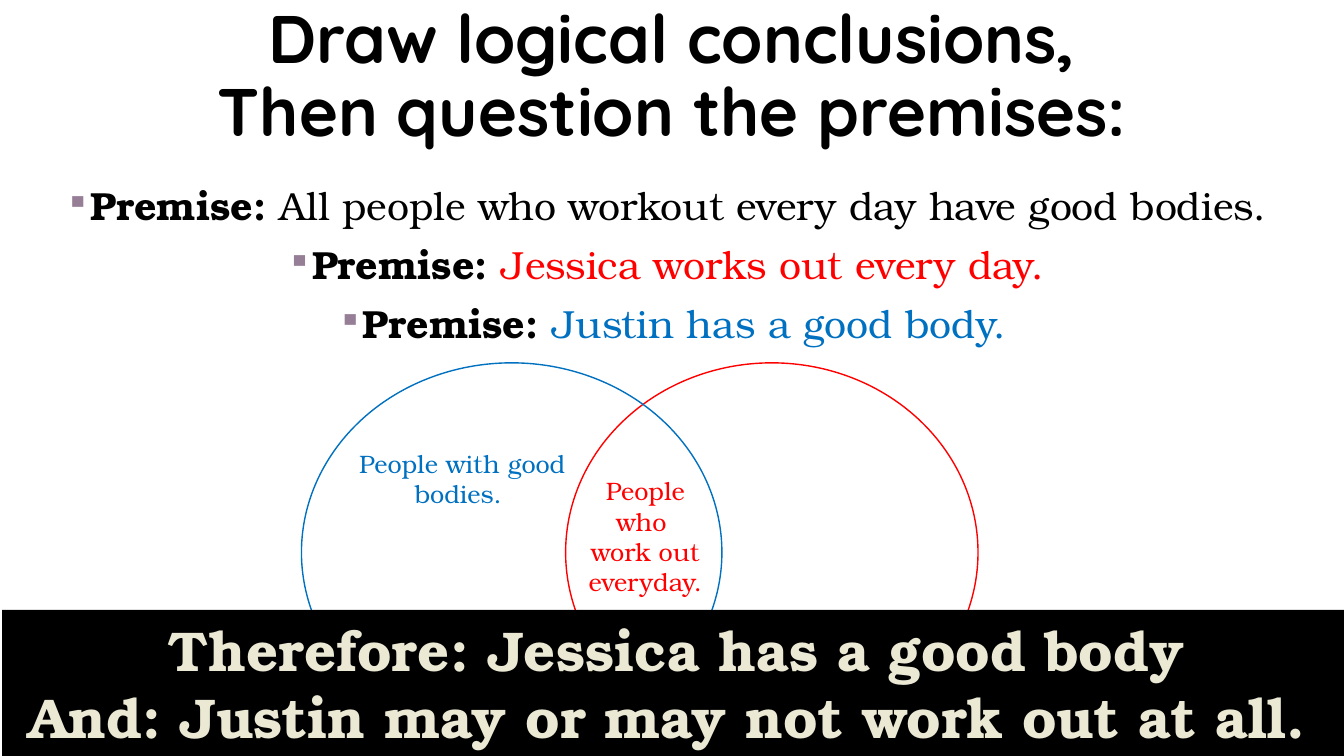
from pptx import Presentation
from pptx.dml.color import RGBColor
from pptx.enum.shapes import MSO_SHAPE
from pptx.enum.text import MSO_ANCHOR, PP_ALIGN
from pptx.oxml.ns import qn
from pptx.util import Inches, Pt
from lxml import etree

BLACK = RGBColor(0x00, 0x00, 0x00)
RED = RGBColor(0xFF, 0x00, 0x00)
BLUE = RGBColor(0x00, 0x70, 0xC0)
CREAM = RGBColor(0xEB, 0xE9, 0xD4)
MAUVE = RGBColor(0x96, 0x7E, 0x96)
HEADING, BODY = "Quicksand", "TeX Gyre Bonum"

PREMISES = [
    ("All people who workout every day have good bodies. ", BLACK),
    ("Jessica works out every day. ", RED),
    ("Justin has a good body.", BLUE),
]


def style(font, color, **values):
    """Set the colour and the given attributes of a font."""
    for name, value in values.items():
        setattr(font, name, value)
    font.color.rgb = color


def add_bullet(p):
    """Give a paragraph a small square bullet with a hanging indent."""
    pPr = p._p.get_or_add_pPr()
    pPr.set("marL", str(Inches(0.2)))
    pPr.set("indent", str(-Inches(0.2)))
    clr = etree.SubElement(pPr, qn("a:buClr"))
    etree.SubElement(clr, qn("a:srgbClr"), val=str(MAUVE))
    etree.SubElement(pPr, qn("a:buSzPct"), val="85000")
    etree.SubElement(pPr, qn("a:buChar"), char="▪")


def add_lines(tf, lines, color, size, bold=False, wrap=True):
    """Write centred paragraphs in one format."""
    tf.word_wrap = wrap
    for i, line in enumerate(lines):
        p = tf.paragraphs[0] if i == 0 else tf.add_paragraph()
        p.alignment = PP_ALIGN.CENTER
        r = p.add_run()
        r.text = line
        style(r.font, color, name=BODY, size=Pt(size), bold=bold)


def add_title(s, x, y, w, h):
    """Place and format the two-line title."""
    sp = s.shapes.title
    box = dict(left=Inches(x), top=Inches(y), width=Inches(w), height=Inches(h))
    for name, value in box.items():
        setattr(sp, name, value)
    tf = sp.text_frame
    tf.text = "Draw logical conclusions,\vThen question the premises:"
    tf.vertical_anchor = MSO_ANCHOR.MIDDLE
    p = tf.paragraphs[0]
    p.alignment, p.line_spacing = PP_ALIGN.CENTER, 0.9
    for r in p.runs:
        style(r.font, BLACK, name=HEADING, size=Pt(48), bold=True)


def add_premises(s, x, y, w, h):
    """List the premises as centred bullets."""
    sp = s.shapes.add_textbox(Inches(x), Inches(y), Inches(w), Inches(h))
    tf = sp.text_frame
    tf.word_wrap = True
    for i, (claim, color) in enumerate(PREMISES):
        p = tf.paragraphs[0] if i == 0 else tf.add_paragraph()
        p.alignment, p.line_spacing = PP_ALIGN.CENTER, 0.9
        p.space_before = Pt(12 if i else 0)
        add_bullet(p)
        for text, ink, bold in (("Premise: ", BLACK, True), (claim, color, False)):
            r = p.add_run()
            r.text = text
            style(r.font, ink, name=BODY, size=Pt(28), bold=bold)


def add_venn(s, x, y, h):
    """Draw two overlapping circles with their labels."""
    for dx, w, color in ((2.62, 4.09, RED), (0, 4.17, BLUE)):
        sp = s.shapes.add_shape(MSO_SHAPE.OVAL, Inches(x + dx), Inches(y),
                                Inches(w), Inches(h))
        sp.shadow.inherit = False
        sp.fill.background()
        sp.line.color.rgb = color
        sp.line.width = Pt(1)
    labels = [
        (2.73, 1.07, 1.36, 1.31, ["People who ", "work out everyday. "], RED, True),
        (0.46, 0.8, 2.27, 0.71, ["People with good", "bodies. "], BLUE, False),
    ]
    for dx, dy, w, lh, lines, color, wrap in labels:
        sp = s.shapes.add_textbox(Inches(x + dx), Inches(y + dy), Inches(w), Inches(lh))
        add_lines(sp.text_frame, lines, color, 18, wrap=wrap)


def add_conclusion(s, x, y, w, h):
    """Draw the black band that states the conclusions."""
    sp = s.shapes.add_shape(MSO_SHAPE.RECTANGLE, Inches(x), Inches(y), Inches(w), Inches(h))
    sp.shadow.inherit = False
    sp.fill.solid()
    sp.fill.fore_color.rgb = BLACK
    sp.line.fill.background()
    lines = ["Therefore: Jessica has a good body",
             "And: Justin may or may not work out at all. "]
    add_lines(sp.text_frame, lines, CREAM, 40, bold=True, wrap=False)


def main():
    """Build the slide and save it."""
    prs = Presentation()
    prs.slide_width, prs.slide_height = Inches(13.33), Inches(7.5)
    s = prs.slides.add_slide(prs.slide_layouts[5])
    add_title(s, 0, 0, 13.33, 1.55)
    add_premises(s, 0, 1.8, 13.33, 1.96)
    add_venn(s, 2.99, 3.6, 3.76)
    add_conclusion(s, 0.02, 6.05, 13.38, 1.45)
    prs.save("out.pptx")


if __name__ == "__main__":
    main()
